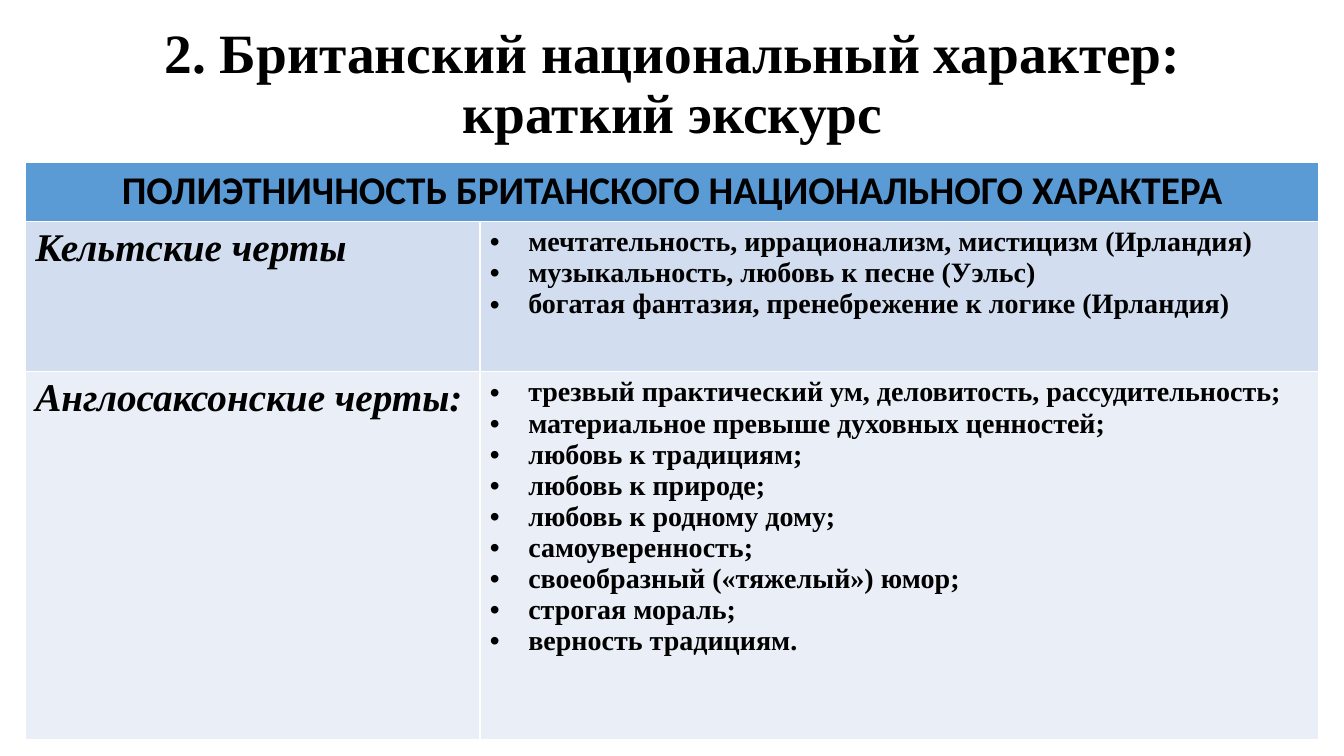
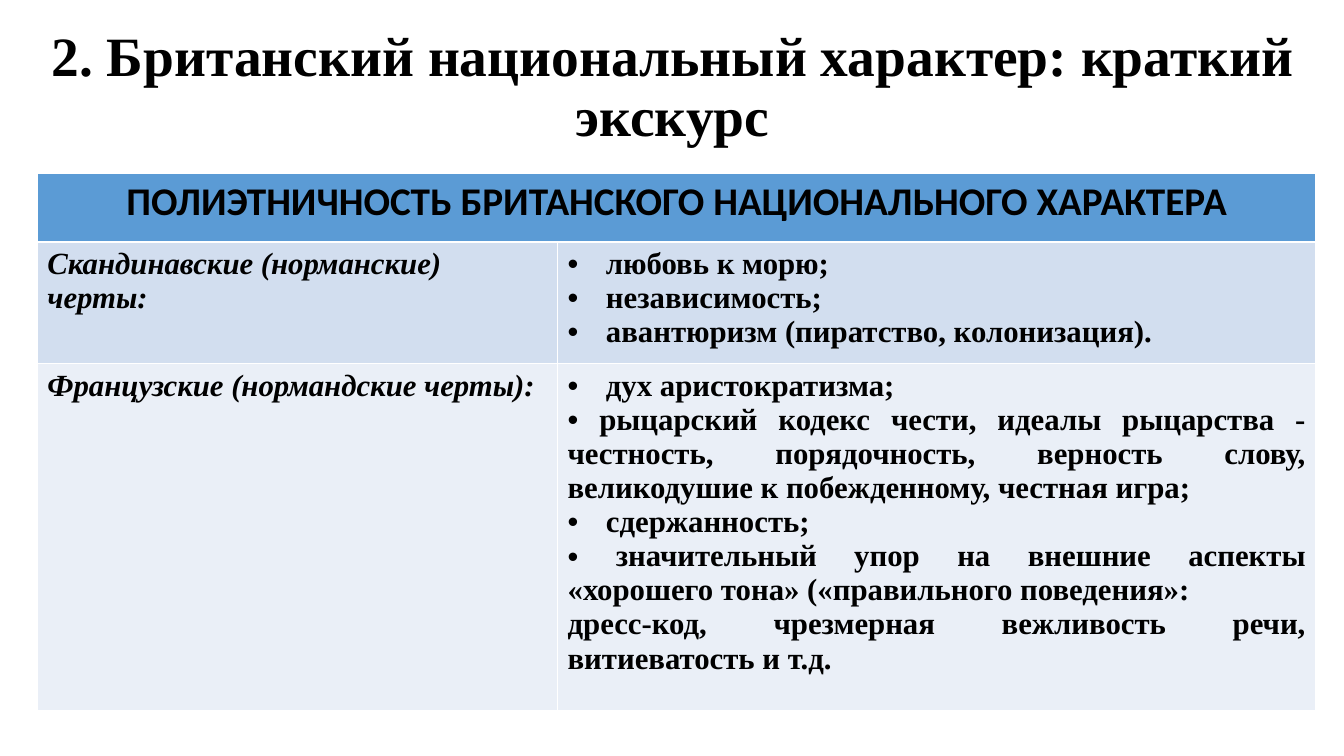
from lxml.etree import SubElement
from pptx import Presentation
from pptx.dml.color import RGBColor
from pptx.enum.text import MSO_ANCHOR, MSO_AUTO_SIZE, PP_ALIGN
from pptx.oxml.ns import qn
from pptx.util import Inches, Pt

BLACK = RGBColor(0x00, 0x00, 0x00)
HEADER_BLUE = RGBColor(0x5B, 0x9B, 0xD5)
ROW_FILLS = [RGBColor(0xD2, 0xDE, 0xEF), RGBColor(0xEA, 0xEF, 0xF7)]
SERIF = "Times New Roman"
TITLE = "2. Британский национальный характер: краткий экскурс"
HEADER = "ПОЛИЭТНИЧНОСТЬ БРИТАНСКОГО НАЦИОНАЛЬНОГО ХАРАКТЕРА"
HANGING, FLUSH, PLAIN = "hanging", "flush", "plain"
BULLET_INDENT = Inches(0.38)

SLIDES = [
    {
        "title_box": (0.92, 0.4, 11.5, 0.89),
        "table_box": (0.25, 1.61, 12.83, 5.73),
        "columns": (4.51, 8.32),
        "rows": (0.59, 1.49, 3.65),
        "label_size": 28,
        "trait_size": 20,
        "trait_align": PP_ALIGN.LEFT,
        "groups": [
            ("Кельтские черты", [
                (HANGING, "мечтательность, иррационализм, мистицизм (Ирландия)"),
                (HANGING, "музыкальность, любовь к песне (Уэльс)"),
                (HANGING, "богатая фантазия, пренебрежение к логике (Ирландия)"),
            ]),
            ("Англосаксонские черты:", [
                (HANGING, "трезвый практический ум, деловитость, рассудительность;"),
                (HANGING, "материальное превыше духовных ценностей;"),
                (HANGING, "любовь к традициям;"),
                (HANGING, "любовь к природе;"),
                (HANGING, "любовь к родному дому;"),
                (HANGING, "самоуверенность;"),
                (HANGING, "своеобразный («тяжелый») юмор;"),
                (HANGING, "строгая мораль;"),
                (HANGING, "верность традициям."),
            ]),
        ],
    },
    {
        "title_box": (0.37, 0.4, 12.6, 0.95),
        "table_box": (0.37, 1.72, 12.68, 5.34),
        "columns": (5.16, 7.52),
        "rows": (0.68, 1.21, 3.44),
        "label_size": 22,
        "trait_size": 22,
        "trait_align": PP_ALIGN.JUSTIFY,
        "groups": [
            ("Скандинавские (норманские) черты:", [
                (HANGING, "любовь к морю;"),
                (HANGING, "независимость;"),
                (HANGING, "авантюризм (пиратство, колонизация)."),
            ]),
            ("Французские (нормандские черты):", [
                (HANGING, "дух аристократизма;"),
                (FLUSH, " рыцарский кодекс чести, идеалы рыцарства - честность, "
                        "порядочность, верность слову, великодушие к побежденному, "
                        "честная игра;"),
                (HANGING, "сдержанность;"),
                (FLUSH, " значительный упор на внешние аспекты «хорошего тона» "
                        "(«правильного поведения»:"),
                (PLAIN, "дресс-код, чрезмерная вежливость речи, витиеватость и т.д."),
            ]),
        ],
    },
]


def write(paragraph, text, align, size, name=SERIF, italic=False):
    paragraph.alignment = align
    run = paragraph.add_run()
    run.text = text
    font_format = {"size": Pt(size), "name": name, "bold": True, "italic": italic}
    for attribute, value in font_format.items():
        setattr(run.font, attribute, value)
    run.font.color.rgb = BLACK


def add_bullet(paragraph, indent):
    properties = paragraph._p.get_or_add_pPr()
    properties.set("marL", str(indent))
    properties.set("indent", str(-indent))
    SubElement(properties, qn("a:buFont"), typeface="Arial")
    SubElement(properties, qn("a:buChar"), char="•")


presentation = Presentation()
presentation.slide_width = Inches(13.33)
presentation.slide_height = Inches(7.5)
title_only = presentation.slide_layouts[5]

for content in SLIDES:
    slide = presentation.slides.add_slide(title_only)

    title = slide.shapes.title
    for side, value in zip(("left", "top", "width", "height"), content["title_box"]):
        setattr(title, side, Inches(value))
    frame = title.text_frame
    frame_format = {
        "vertical_anchor": MSO_ANCHOR.MIDDLE,
        "auto_size": MSO_AUTO_SIZE.NONE,
        "word_wrap": True,
    }
    for attribute, value in frame_format.items():
        setattr(frame, attribute, value)
    frame.paragraphs[0].line_spacing = 0.9
    write(frame.paragraphs[0], TITLE, PP_ALIGN.CENTER, 39.6)

    table_box = [Inches(value) for value in content["table_box"]]
    table = slide.shapes.add_table(3, 2, *table_box).table
    for column, width in zip(table.columns, content["columns"]):
        column.width = Inches(width)
    for row, height in zip(table.rows, content["rows"]):
        row.height = Inches(height)
    for row, color in zip(table.rows, [HEADER_BLUE, *ROW_FILLS]):
        for cell in row.cells:
            cell.fill.solid()
            cell.fill.fore_color.rgb = color

    header = table.cell(0, 0)
    header.merge(table.cell(0, 1))
    write(header.text_frame.paragraphs[0], HEADER, PP_ALIGN.CENTER, 28, "Calibri")

    for index, (label, traits) in enumerate(content["groups"], start=1):
        label_paragraph = table.cell(index, 0).text_frame.paragraphs[0]
        write(label_paragraph, label, PP_ALIGN.LEFT, content["label_size"], italic=True)

        trait_frame = table.cell(index, 1).text_frame
        for position, (style, text) in enumerate(traits):
            paragraph = trait_frame.add_paragraph() if position else trait_frame.paragraphs[0]
            if style != PLAIN:
                add_bullet(paragraph, BULLET_INDENT if style == HANGING else 0)
            write(paragraph, text, content["trait_align"], content["trait_size"])

presentation.save("out.pptx")
